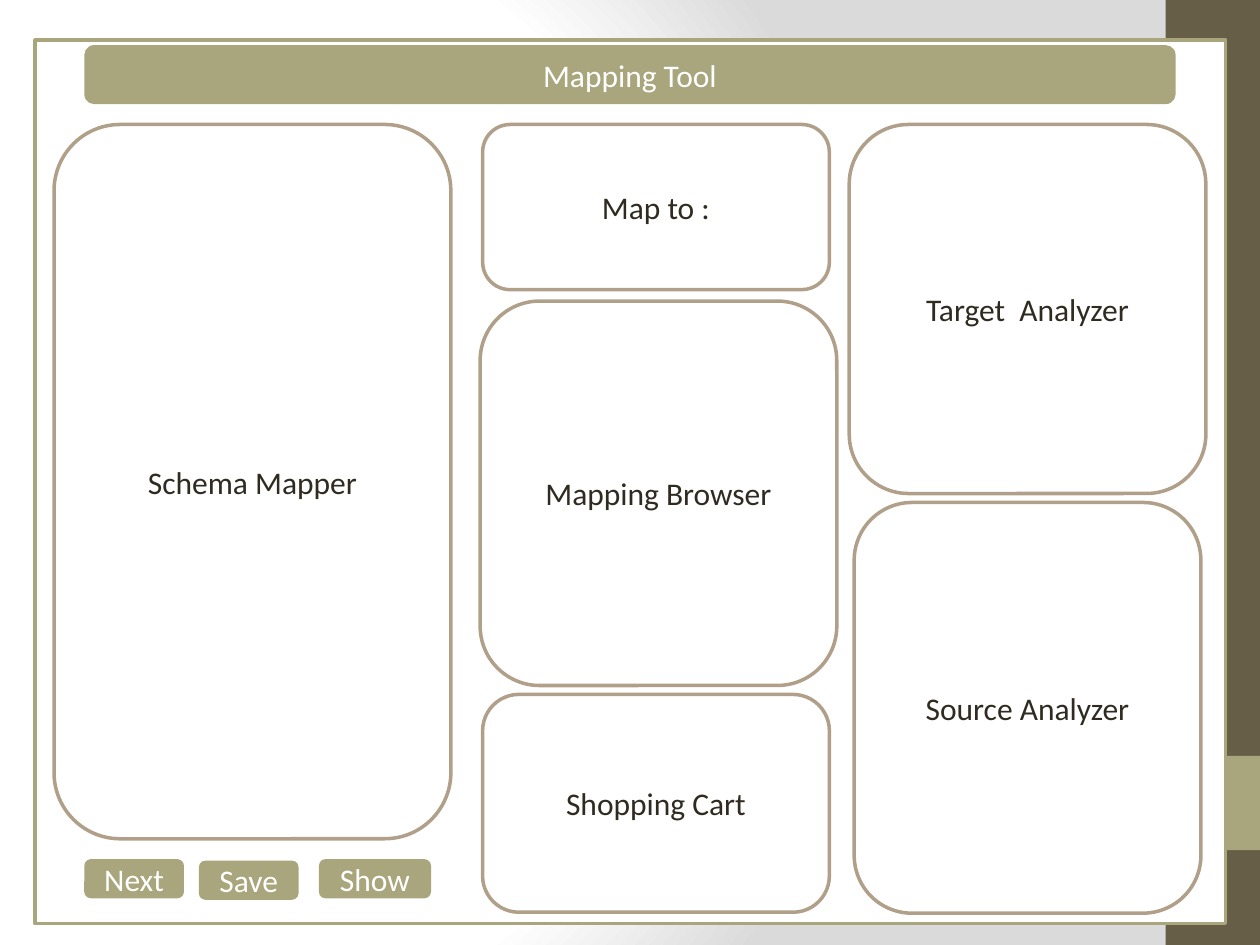
"""Build the Mapping Tool screen layout slide."""
import pptx
import pptx.dml.color
import pptx.enum.shapes
import pptx.enum.text
import pptx.oxml
import pptx.oxml.ns
import pptx.util

Cm = pptx.util.Cm
RGBColor = pptx.dml.color.RGBColor
MSO_SHAPE = pptx.enum.shapes.MSO_SHAPE

WHITE = RGBColor(0xFF, 0xFF, 0xFF)
GREY = RGBColor(0xDA, 0xDA, 0xDA)
BROWN = RGBColor(0x67, 0x5E, 0x47)
OLIVE = RGBColor(0xA9, 0xA5, 0x7C)
TAN = RGBColor(0xB1, 0xA0, 0x89)
INK = RGBColor(0x2F, 0x2B, 0x20)

TOP = 2.51
TITLE_BOX = (1.7, 0.91, 22, 1.19)
PANELS = [
    ("Schema Mapper", (1.09, TOP, 8, 14.4)),
    ("Map to :", (9.73, TOP, 6.99, 3.33)),
    ("Target  Analyzer", (17.12, TOP, 7.19, 7.44)),
    ("Source Analyzer", (17.22, 10.13, 6.99, 8.28)),
    ("Mapping Browser", (9.68, 6.07, 7.19, 7.75)),
    ("Shopping Cart", (9.73, 14, 6.99, 4.39)),
]
BUTTONS = [
    ("Next", (1.7, 17.32, 2.01, 0.79)),
    ("Save", (4.01, 17.35, 2.01, 0.79)),
    ("Show", (6.43, 17.32, 2.26, 0.79)),
]


def set_background(s):
    """Give the slide a circular gradient from white to grey."""
    s.background.fill.solid()
    bg = s.element.find(".//" + pptx.oxml.ns.qn("p:bgPr"))
    stops = "".join(
        f'<a:gs pos="{pos}000"><a:srgbClr val="{color}"/></a:gs>'
        for pos, color in ((0, WHITE), (75, WHITE), (100, GREY))
    )
    bg[0] = pptx.oxml.parse_xml(
        f'<a:gradFill {pptx.oxml.ns.nsdecls("a")} rotWithShape="1">'
        f'<a:gsLst>{stops}</a:gsLst><a:path path="circle">'
        '<a:fillToRect l="20000" t="50000" r="100000" b="50000"/>'
        "</a:path></a:gradFill>"
    )


def write_text(sp, text, color):
    """Put one centred line of text in a shape."""
    tf = sp.text_frame
    tf.word_wrap = True
    tf.vertical_anchor = pptx.enum.text.MSO_ANCHOR.MIDDLE
    p = tf.paragraphs[0]
    p.alignment = pptx.enum.text.PP_ALIGN.CENTER
    r = p.add_run()
    r.text = text
    r.font.name = "Calibri"
    r.font.size = pptx.util.Pt(18)
    r.font.color.rgb = color


def add_box(s, kind, box, fill, line=None):
    """Add a filled shape, outlined when a line colour is given."""
    sp = s.shapes.add_shape(kind, *map(Cm, box))
    sp.shadow.inherit = False
    sp.fill.solid()
    sp.fill.fore_color.rgb = fill
    if line is None:
        sp.line.fill.background()
    else:
        sp.line.color.rgb = line
        sp.line.width = pptx.util.Pt(2)
    return sp


def add_title(s, text, box):
    """Place the title on its olive bar."""
    add_box(s, MSO_SHAPE.ROUNDED_RECTANGLE, box, OLIVE)
    sp = s.shapes.title
    sp.left, sp.top, sp.width, sp.height = map(Cm, box)
    write_text(sp, text, WHITE)
    s.shapes.element.append(sp.element)


def add_panel(s, text, box):
    """Add a white panel with a tan outline."""
    sp = add_box(s, MSO_SHAPE.ROUNDED_RECTANGLE, box, WHITE, TAN)
    write_text(sp, text, INK)


def add_button(s, text, box):
    """Add an olive button."""
    sp = add_box(s, MSO_SHAPE.ROUNDED_RECTANGLE, box, OLIVE)
    write_text(sp, text, WHITE)


def main():
    """Build and save the slide."""
    prs = pptx.Presentation()
    prs.slide_width, prs.slide_height = Cm(25.4), Cm(19.05)
    s = prs.slides.add_slide(prs.slide_layouts[5])
    set_background(s)
    add_box(s, MSO_SHAPE.RECTANGLE, (23.5, 0, 1.9, 19.05), BROWN)
    add_box(s, MSO_SHAPE.RECTANGLE, (23.5, 15.24, 1.9, 1.9), OLIVE)
    add_box(s, MSO_SHAPE.RECTANGLE, (0.71, 0.81, 24, 17.81), WHITE, OLIVE)
    add_title(s, "Mapping Tool", TITLE_BOX)
    for text, box in PANELS:
        add_panel(s, text, box)
    for text, box in BUTTONS:
        add_button(s, text, box)
    prs.save("out.pptx")


if __name__ == "__main__":
    main()
